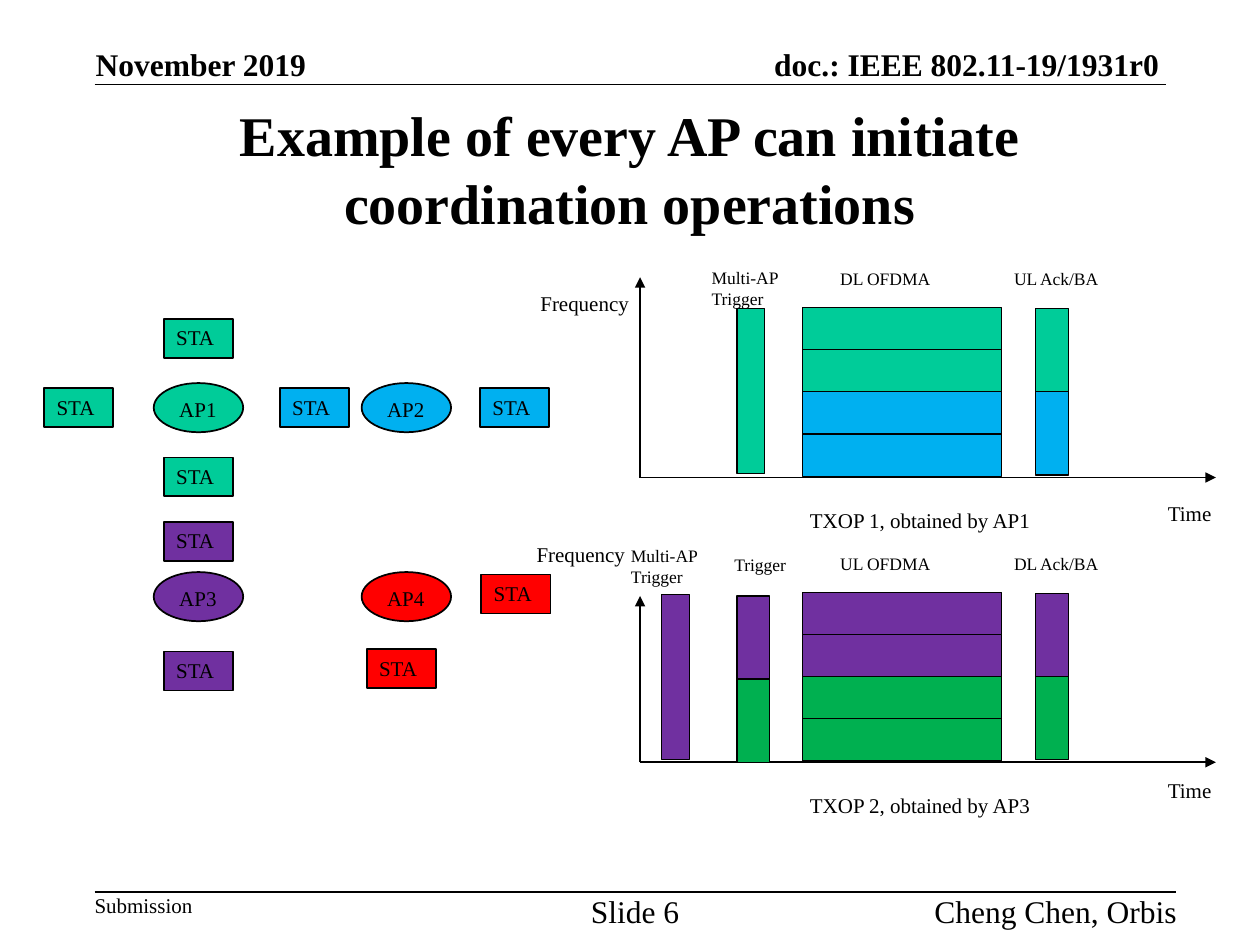
from lxml.etree import SubElement
from pptx import Presentation
from pptx.dml.color import RGBColor
from pptx.enum.shapes import MSO_CONNECTOR, MSO_SHAPE
from pptx.enum.text import MSO_ANCHOR, PP_ALIGN
from pptx.oxml.ns import qn
from pptx.util import Inches, Pt

BLACK = RGBColor(0x00, 0x00, 0x00)
TEAL = RGBColor(0x00, 0xCC, 0x99)
BLUE = RGBColor(0x00, 0xB0, 0xF0)
PURPLE = RGBColor(0x70, 0x30, 0xA0)
RED = RGBColor(0xFF, 0x00, 0x00)
GREEN = RGBColor(0x00, 0xB0, 0x50)

FONT = "Times New Roman"
COLUMNS, ROWS = 100, 75  # square cells, a tenth of an inch each
AXIS_LEFT = 50.8
STACK_HEIGHT = 13.4


def cells(count):
    return Inches(count / 10)


def write_text(box, text, size=12, bold=False, align=PP_ALIGN.LEFT,
               anchor=MSO_ANCHOR.TOP, wrap=True, inset=True):
    frame = box.text_frame
    frame.word_wrap = wrap
    frame.vertical_anchor = anchor
    frame.margin_left = frame.margin_right = cells(1 if inset else 0)
    frame.margin_top = frame.margin_bottom = cells(0.5 if inset else 0)
    para = frame.paragraphs[0]
    para.alignment = align
    span = para.add_run()
    span.text = text
    span.font.name = FONT
    span.font.size = Pt(size)
    span.font.bold = bold
    span.font.color.rgb = BLACK


def add_text(page, text, left, top, width, height, **style):
    box = page.shapes.add_textbox(*map(cells, (left, top, width, height)))
    write_text(box, text, **style)


def add_block(page, left, top, width, height, color,
              kind=MSO_SHAPE.RECTANGLE, line=0.75, text=None):
    block = page.shapes.add_shape(kind, *map(cells, (left, top, width, height)))
    block.shadow.inherit = False
    block.fill.solid()
    block.fill.fore_color.rgb = color
    block.line.color.rgb = BLACK
    block.line.width = Pt(line)
    if text:
        write_text(block, text)


def add_line(page, start, end, arrow=False):
    line = page.shapes.add_connector(MSO_CONNECTOR.STRAIGHT,
                                     *map(cells, (*start, *end)))
    line.line.color.rgb = BLACK
    line.line.width = Pt(1)
    properties = line._element.spPr
    if arrow:
        SubElement(properties.find(qn("a:ln")), qn("a:tailEnd"), type="triangle")
    SubElement(properties, qn("a:effectLst"))


def add_stack(page, left, top, width, height, colors):
    """Equal blocks, one below another."""
    step = height / len(colors)
    for index, color in enumerate(colors):
        add_block(page, left, top + index * step, width, step, color)


def add_header_and_footer(page):
    edge = dict(size=18, wrap=False, inset=False)
    head = dict(edge, bold=True, anchor=MSO_ANCHOR.BOTTOM)
    add_text(page, "November 2019", 7.6, 3.6, 16.9, 3, **head)
    add_text(page, "doc.: IEEE 802.11-19/1931r0", 56.1, 3.6, 35.9, 3,
             align=PP_ALIGN.RIGHT, **head)
    add_line(page, (7.5, 6.7), (92.5, 6.7))
    add_line(page, (7.5, 70.8), (93.3, 70.8))
    add_text(page, "Submission", 7.5, 70.8, 7.9, 2, wrap=False, inset=False)
    add_text(page, "Slide 6", 45.4, 70.8, 10, 3, align=PP_ALIGN.CENTER, **edge)
    add_text(page, "Cheng Chen, Orbis", 70.4, 70.8, 23, 3,
             align=PP_ALIGN.RIGHT, **edge)


def add_network(page):
    # Access points
    for name, left, top, color in (("AP1", 12.2, 30.4, TEAL),
                                   ("AP2", 28.7, 30.4, BLUE),
                                   ("AP3", 12.2, 45.4, PURPLE),
                                   ("AP4", 28.7, 45.4, RED)):
        add_block(page, left, top, 7.1, 3.9, color, MSO_SHAPE.OVAL, 1, name)
    # Stations of each access point
    stations = {TEAL: ((13, 25.3), (3.5, 30.8), (13, 36.3)),
                BLUE: ((22.2, 30.8), (38.1, 30.8)),
                PURPLE: ((13, 41.4), (13, 51.7)),
                RED: ((38.2, 45.6), (29.1, 51.5))}
    for color, places in stations.items():
        for left, top in places:
            add_block(page, left, top, 5.5, 3.1, color, line=1, text="STA")


def add_timeline(page, base, height, upper, lower, data, reply, caption):
    """Axes, data stack and reply stack standing on the time axis at base."""
    top = base - 13.5
    add_line(page, (AXIS_LEFT, base), (96.5, base), arrow=True)
    add_line(page, (AXIS_LEFT, base), (AXIS_LEFT, base - height), arrow=True)
    add_stack(page, 63.7, top, 15.8, STACK_HEIGHT, (upper, upper, lower, lower))
    add_stack(page, 82.2, top + 0.1, 2.6, 13.2, (upper, lower))
    add_text(page, data, 65.7, top - 3.6, 10.1, 2.7, size=10)
    add_text(page, reply, 79.5, top - 3.6, 10.8, 2.7, size=10)
    add_text(page, caption, 63.3, base + 1.9, 19.7, 3, wrap=False)


def add_multi_ap_trigger(page, left, top, label_left, label_top, color):
    add_block(page, left, top, 2.2, 13.1, color)
    add_text(page, "Multi-AP Trigger", label_left, label_top, 7.4, 4.4, size=10)


def main():
    deck = Presentation()
    deck.slide_width, deck.slide_height = cells(COLUMNS), cells(ROWS)
    page = deck.slides.add_slide(deck.slide_layouts[6])

    add_header_and_footer(page)
    add_text(page, "Example of every AP can initiate coordination operations",
             7.5, 7.5, 85, 11.7, size=32, bold=True,
             align=PP_ALIGN.CENTER, anchor=MSO_ANCHOR.MIDDLE)
    add_network(page)

    # First transmit opportunity
    add_timeline(page, 37.9, 15.9, TEAL, BLUE, "DL OFDMA", "UL Ack/BA",
                 "TXOP 1, obtained by AP1")
    add_multi_ap_trigger(page, 58.5, 24.5, 55.5, 20.7, TEAL)

    # Second transmit opportunity
    add_timeline(page, 60.5, 13.2, PURPLE, GREEN, "UL OFDMA", "DL Ack/BA",
                 "TXOP 2, obtained by AP3")
    add_multi_ap_trigger(page, 52.5, 47.2, 49.1, 42.8, PURPLE)
    add_stack(page, 58.5, 47.3, 2.6, 13.2, (PURPLE, GREEN))
    add_text(page, "Trigger", 57.3, 43.5, 7.4, 2.7, size=10)

    # Axis names
    for name, left, top, width in (("Frequency", 41.9, 22.6, 9.1),
                                   ("Frequency", 41.6, 42.5, 9.1),
                                   ("Time", 91.7, 39.2, 5.5),
                                   ("Time", 91.7, 61.2, 5.5)):
        add_text(page, name, left, top, width, 3, wrap=False)

    deck.save("out.pptx")


if __name__ == "__main__":
    main()
